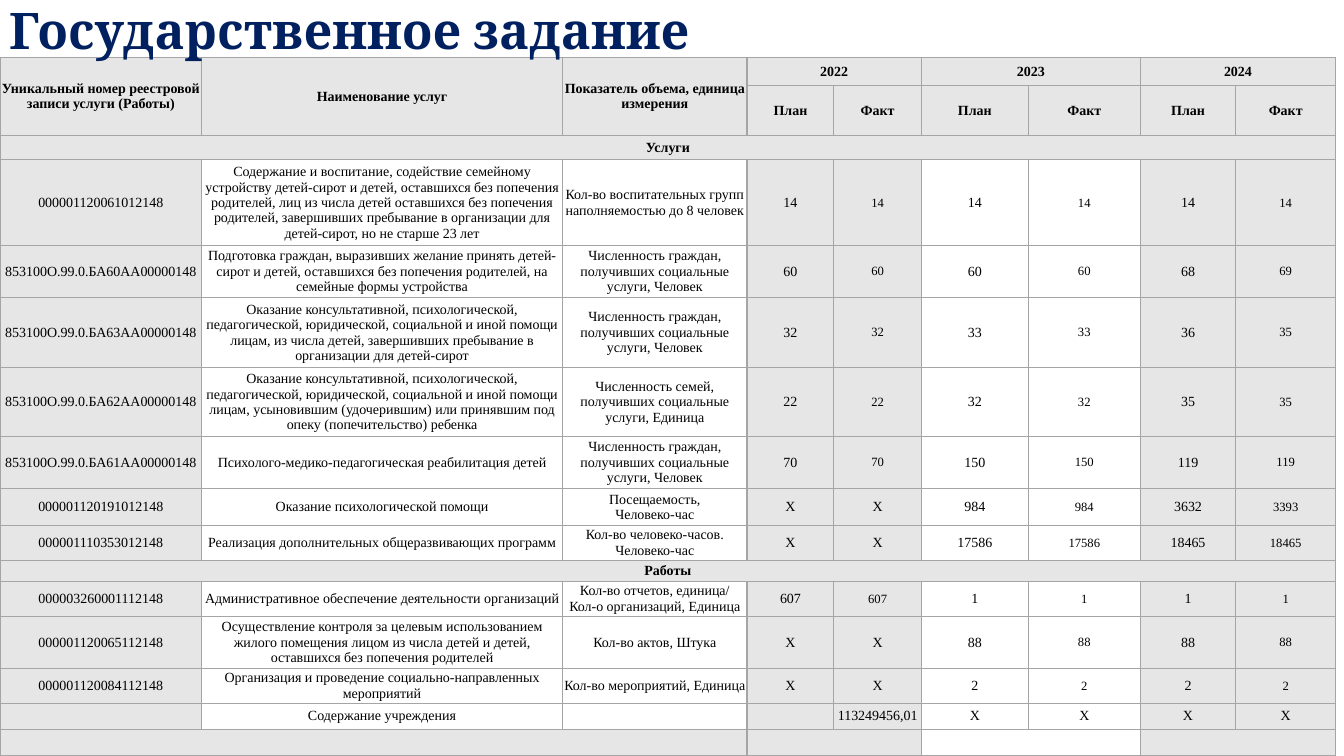
from dataclasses import dataclass
from lxml import etree
from pptx import Presentation
from pptx.dml.color import RGBColor
from pptx.enum import text as kinds
from pptx.oxml.ns import qn
from pptx.util import Pt

TITLE = "Государственное задание"
PEOPLE = "Численность граждан, получивших социальные услуги, Человек"
ADVICE = ("Оказание консультативной, психологической, педагогической, "
          "юридической, социальной и иной помощи лицам, ")
YEARS = ["2022", "2023", "2024"]
HEADS = ["Уникальный номер реестровой записи услуги (Работы)",
         "Наименование услуг", "Показатель объема, единица измерения"]
SERVICES = [
    ["000001120061012148",
     "Содержание и воспитание, содействие семейному устройству детей-сирот и "
     "детей, оставшихся без попечения родителей, лиц из числа детей оставшихся "
     "без попечения родителей, завершивших пребывание в организации для "
     "детей-сирот, но не старше 23 лет",
     "Кол-во воспитательных групп наполняемостью до 8 человек",
     "14", "14", "14", "14", "14", "14"],
    ["853100О.99.0.БА60АА00000148",
     "Подготовка граждан, выразивших желание принять детей-сирот и детей, "
     "оставшихся без попечения родителей, на семейные формы устройства",
     PEOPLE, "60", "60", "60", "60", "68", "69"],
    ["853100О.99.0.БА63АА00000148",
     ADVICE + "из числа детей, завершивших пребывание в организации для детей-сирот",
     PEOPLE, "32", "32", "33", "33", "36", "35"],
    ["853100О.99.0.БА62АА00000148",
     ADVICE + "усыновившим (удочерившим) или принявшим под опеку (попечительство) ребенка",
     "Численность семей, получивших социальные услуги, Единица",
     "22", "22", "32", "32", "35", "35"],
    ["853100О.99.0.БА61АА00000148",
     "Психолого-медико-педагогическая реабилитация детей",
     PEOPLE, "70", "70", "150", "150", "119", "119"],
    ["000001120191012148", "Оказание психологической помощи",
     "Посещаемость,\vЧеловеко-час", "Х", "Х", "984", "984", "3632", "3393"],
    ["000001110353012148", "Реализация дополнительных общеразвивающих программ",
     "Кол-во человеко-часов. Человеко-час",
     "Х", "Х", "17586", "17586", "18465", "18465"],
]
WORKS = [
    ["000003260001112148", "Административное обеспечение деятельности организаций",
     "Кол-во отчетов, единица/\vКол-о организаций, Единица",
     "607", "607", "1", "1", "1", "1"],
    ["000001120065112148",
     "Осуществление контроля за целевым использованием жилого помещения лицом "
     "из числа детей и детей, оставшихся без попечения родителей",
     "Кол-во актов, Штука", "Х", "Х", "88", "88", "88", "88"],
    ["000001120084112148",
     "Организация и проведение социально-направленных мероприятий",
     "Кол-во мероприятий, Единица", "Х", "Х", "2", "2", "2", "2"],
    ["", "Содержание учреждения", "", "", "113249456,01", "Х", "Х", "Х", "Х"],
]
WIDTHS = [143.9, 257.9, 131.8, 62.1, 62.5, 76.4, 80, 68.2, 71.4]
HEIGHTS = [20.2, 35.8, 17.2, 61.4, 37.1, 50, 49.3, 37.1, 26.4,
           25, 15, 25, 37.1, 25, 18.6, 18.6]
PLAIN = (1, 2, 5, 6)
FACTS = (4, 6, 8)


@dataclass
class Theme:
    navy: str = "002060"
    black: str = "000000"
    grey: str = "E7E6E6"
    white: str = "FFFFFF"
    edge: str = "A5A5A5"
    serif: str = "Times New Roman"
    display: str = "Cambria"
    big: int = 36
    body: int = 10
    small: int = 9


theme = Theme()


def write(frame, words, size=theme.body, bold=False, color=theme.black,
          face=theme.serif, align=kinds.PP_ALIGN.CENTER):
    para = frame.paragraphs[0]
    para.text = words
    para.alignment = align
    for run in para.runs:
        font = run.font
        font.size, font.bold, font.name = Pt(size), bold, face
        font.color.rgb = RGBColor.from_string(color)
    for gap in para._p.findall(qn("a:br")):
        etree.SubElement(gap, qn("a:rPr"), sz=str(size * 100))
    if not words:
        etree.SubElement(para._p, qn("a:endParaRPr"), sz=str(size * 100))


def outline(cell):
    props = cell._tc.get_or_add_tcPr()
    for side in ("a:lnL", "a:lnR", "a:lnT", "a:lnB"):
        line = etree.SubElement(props, qn(side), w=str(Pt(1)))
        fill = etree.SubElement(line, qn("a:solidFill"))
        etree.SubElement(fill, qn("a:srgbClr"), val=theme.edge)


def layout():
    top = HEADS + [word for year in YEARS for word in (year, "")]
    sub = [""] * 3 + ["План", "Факт"] * 3
    bars = [[name] + [""] * 8 for name in ("Услуги", "Работы")]
    rows = [top, sub, bars[0], *SERVICES, bars[1], *WORKS, [""] * 9]
    return rows, {0, 1, 2, 3 + len(SERVICES)}


def draw(slide):
    rows, strong = layout()
    frame = slide.shapes.add_table(len(rows), len(WIDTHS), Pt(0), Pt(41),
                                   Pt(sum(WIDTHS)), Pt(sum(HEIGHTS)))
    grid = frame.table
    grid.first_row = grid.horz_banding = False
    for col, width in zip(grid.columns, WIDTHS):
        col.width = Pt(width)
    for row, height in zip(grid.rows, HEIGHTS):
        row.height = Pt(height)
    for r, row in enumerate(rows):
        for c, words in enumerate(row):
            cell = grid.cell(r, c)
            outline(cell)
            shade = theme.white if c in PLAIN and r not in strong else theme.grey
            cell.fill.solid()
            cell.fill.fore_color.rgb = RGBColor.from_string(shade)
            cell.margin_left = cell.margin_right = Pt(0)
            cell.margin_top = cell.margin_bottom = Pt(0)
            cell.vertical_anchor = kinds.MSO_ANCHOR.MIDDLE
            minor = c in FACTS and words.isdigit() and r not in strong
            write(cell.text_frame, words, bold=r in strong,
                  size=theme.small if minor else theme.body)
    last = len(rows) - 1
    spans = [(0, c, 1, c) for c in range(3)]
    spans += [(r, c, r, c + 1) for r in (0, last) for c in (3, 5, 7)]
    spans += [(r, 0, r, 8) for r in strong - {0, 1}] + [(last, 0, last, 2)]
    for r, c, low, far in spans:
        grid.cell(r, c).merge(grid.cell(low, far))
    return frame


def main():
    deck = Presentation()
    deck.slide_width, deck.slide_height = Pt(960), Pt(540)
    slide = deck.slides.add_slide(deck.slide_layouts[5])
    title = slide.shapes.title
    title.left, title.top, title.width, title.height = Pt(-0.7), Pt(-4.3), Pt(960), Pt(51)
    box = title.text_frame
    box.word_wrap = True
    box.auto_size = kinds.MSO_AUTO_SIZE.SHAPE_TO_FIT_TEXT
    box.vertical_anchor = kinds.MSO_ANCHOR.TOP
    write(box, TITLE, size=theme.big, bold=True, color=theme.navy,
          face=theme.display, align=kinds.PP_ALIGN.LEFT)
    frame = draw(slide)
    frame.element.addnext(title.element)
    deck.save("out.pptx")


if __name__ == "__main__":
    main()
